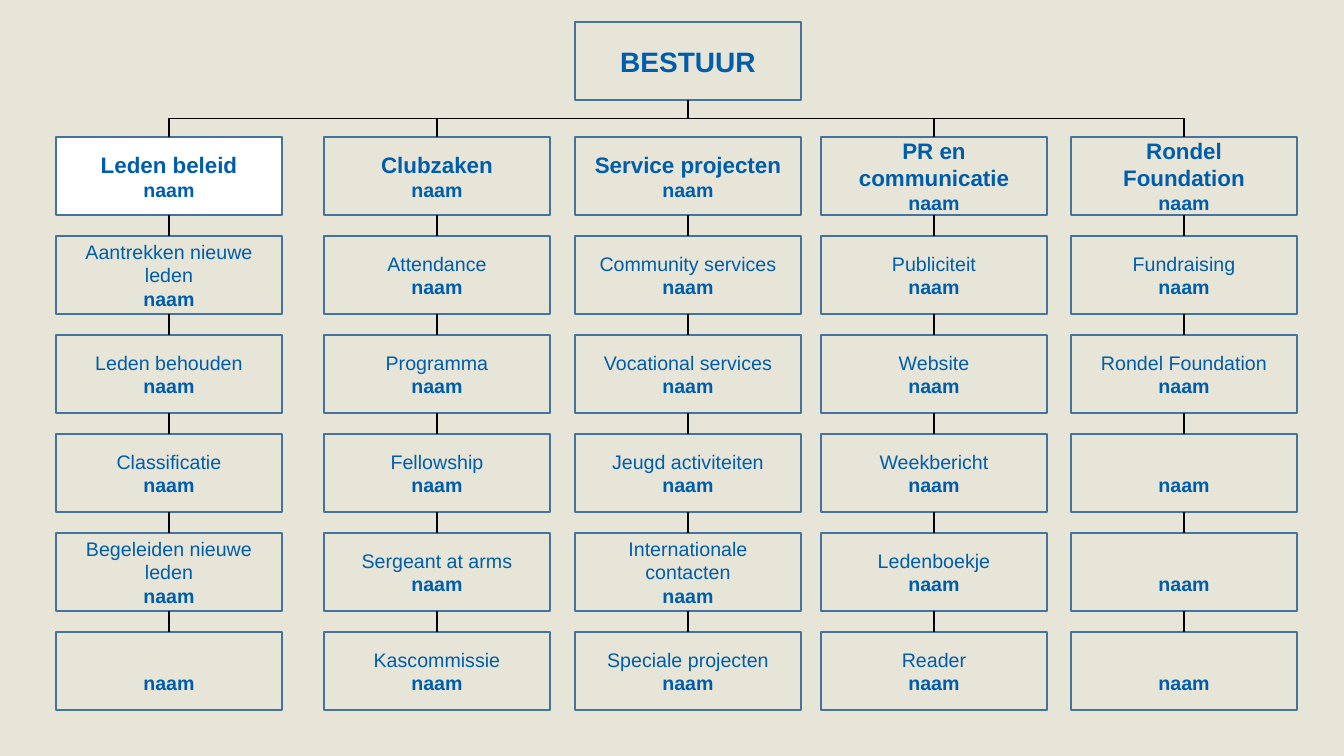
from lxml import etree
from pptx import Presentation
from pptx.dml.color import RGBColor
from pptx.enum.shapes import MSO_CONNECTOR, MSO_SHAPE
from pptx.enum.text import MSO_ANCHOR, MSO_AUTO_SIZE, PP_ALIGN
from pptx.oxml.ns import qn
from pptx.util import Pt

STRAIGHT, ELBOW = MSO_CONNECTOR.STRAIGHT, MSO_CONNECTOR.ELBOW
RECTANGLE = MSO_SHAPE.RECTANGLE
TOP_SIDE, BOTTOM_SIDE = 0, 2

BOARD = "BESTUUR"
MEMBER = "naam"
# left edge in px, heading lines, heading fill, tasks ("" = not yet named)
COMMITTEES = [
    (56, ["Leden beleid"], "FFFFFF",
     ["Aantrekken nieuwe leden", "Leden behouden", "Classificatie",
      "Begeleiden nieuwe leden", ""]),
    (324, ["Clubzaken"], None,
     ["Attendance", "Programma", "Fellowship", "Sergeant at arms", "Kascommissie"]),
    (575, ["Service projecten"], None,
     ["Community services", "Vocational services", "Jeugd activiteiten",
      "Internationale contacten", "Speciale projecten"]),
    (821, ["PR en communicatie"], None,
     ["Publiciteit", "Website", "Weekbericht", "Ledenboekje", "Reader"]),
    (1071, ["Rondel", "Foundation"], None,
     ["Fundraising", "Rondel Foundation", "", "", ""]),
]

SLIDE_W, SLIDE_H = 1344, 756
BOX_W, BOX_H = 226, 78
BOARD_LEFT, BOARD_TOP = 575, 22
HEADING_TOP = 137
TASK_TOP, TASK_STEP = 236, 99
INSET_Y, TASK_LINE = 5, 24

BACKGROUND, BORDER, TEXT, LINK = "E6E5D8", "43739E", "005DAA", "000000"
BOARD_FONT = {"size": Pt(20), "bold": True}
HEADING_FONT = {"size": Pt(16), "bold": True}
TASK_FONT = {"size": Pt(14), "bold": False}
MEMBER_FONT = {"size": Pt(14), "bold": True}


def px(length):
    return round(length * 914400 / 100.8)


def color(hex_code):
    return RGBColor.from_string(hex_code)


def format_box(box, lines, fill=None, inset_top=INSET_Y):
    """Style a box and write its lines, given as (text, font values) pairs."""
    if fill:
        box.fill.solid()
        box.fill.fore_color.rgb = color(fill)
    else:
        box.fill.background()
    box.line.color.rgb = color(BORDER)
    box.line.width = Pt(1)

    frame = box.text_frame
    frame_format = {
        "word_wrap": True, "auto_size": MSO_AUTO_SIZE.NONE,
        "vertical_anchor": MSO_ANCHOR.MIDDLE,
        "margin_top": px(inset_top), "margin_bottom": px(INSET_Y),
    }
    for key, value in frame_format.items():
        setattr(frame, key, value)
    for index, (text, font_format) in enumerate(lines):
        paragraph = frame.paragraphs[0] if index == 0 else frame.add_paragraph()
        paragraph.alignment = PP_ALIGN.CENTER
        run = paragraph.add_run()
        run.text = text
        for key, value in {"name": "Arial", **font_format}.items():
            setattr(run.font, key, value)
        run.font.color.rgb = color(TEXT)


def add_box(slide, left, top, lines, **style):
    box = slide.shapes.add_shape(RECTANGLE, px(left), px(top), px(BOX_W), px(BOX_H))
    box.shadow.inherit = False
    format_box(box, lines, **style)
    return box


def join(slide, upper, lower, kind=STRAIGHT):
    """Connect the bottom of one box to the top of another."""
    link = slide.shapes.add_connector(kind, 0, 0, 0, 0)
    link.begin_connect(upper, BOTTOM_SIDE)
    link.end_connect(lower, TOP_SIDE)
    link.line.color.rgb = color(LINK)
    link.line.width = Pt(1)
    etree.SubElement(link.element.spPr, qn("a:effectLst"))
    return link


def join_elbow(slide, upper, lower):
    """Connect with a bent line, turned so that it leaves downwards."""
    link = join(slide, upper, lower, ELBOW)
    run_x, run_y = link.end_x - link.begin_x, link.end_y - link.begin_y
    middle_x = (link.begin_x + link.end_x) // 2
    middle_y = (link.begin_y + link.end_y) // 2
    link.width, link.height = run_y, abs(run_x)
    link.left, link.top = middle_x - run_y // 2, middle_y - abs(run_x) // 2
    xfrm = link.element.spPr.find(qn("a:xfrm"))
    xfrm.attrib.clear()
    xfrm.set("rot", str((90 if run_x < 0 else 270) * 60000))
    if run_x > 0:
        xfrm.set("flipH", "1")


def main():
    deck = Presentation()
    deck.slide_width, deck.slide_height = px(SLIDE_W), px(SLIDE_H)
    slide = deck.slides.add_slide(deck.slide_layouts[5])
    slide.background.fill.solid()
    slide.background.fill.fore_color.rgb = color(BACKGROUND)

    board = slide.shapes.title
    board.left, board.top = px(BOARD_LEFT), px(BOARD_TOP)
    board.width, board.height = px(BOX_W), px(BOX_H)
    format_box(board, [(BOARD, BOARD_FONT)])

    for left, heading_lines, fill, tasks in COMMITTEES:
        lines = [(text, HEADING_FONT) for text in heading_lines]
        heading = add_box(slide, left, HEADING_TOP,
                          lines + [(MEMBER, MEMBER_FONT)], fill=fill)
        if left != BOARD_LEFT:
            join_elbow(slide, board, heading)
        above = heading
        for row, task in enumerate(tasks):
            lines = [(task, TASK_FONT)] if task else []
            box = add_box(slide, left, TASK_TOP + row * TASK_STEP,
                          lines + [(MEMBER, MEMBER_FONT)],
                          inset_top=INSET_Y if task else INSET_Y + TASK_LINE)
            join(slide, above, box)
            above = box

    deck.save("out.pptx")


if __name__ == "__main__":
    main()
